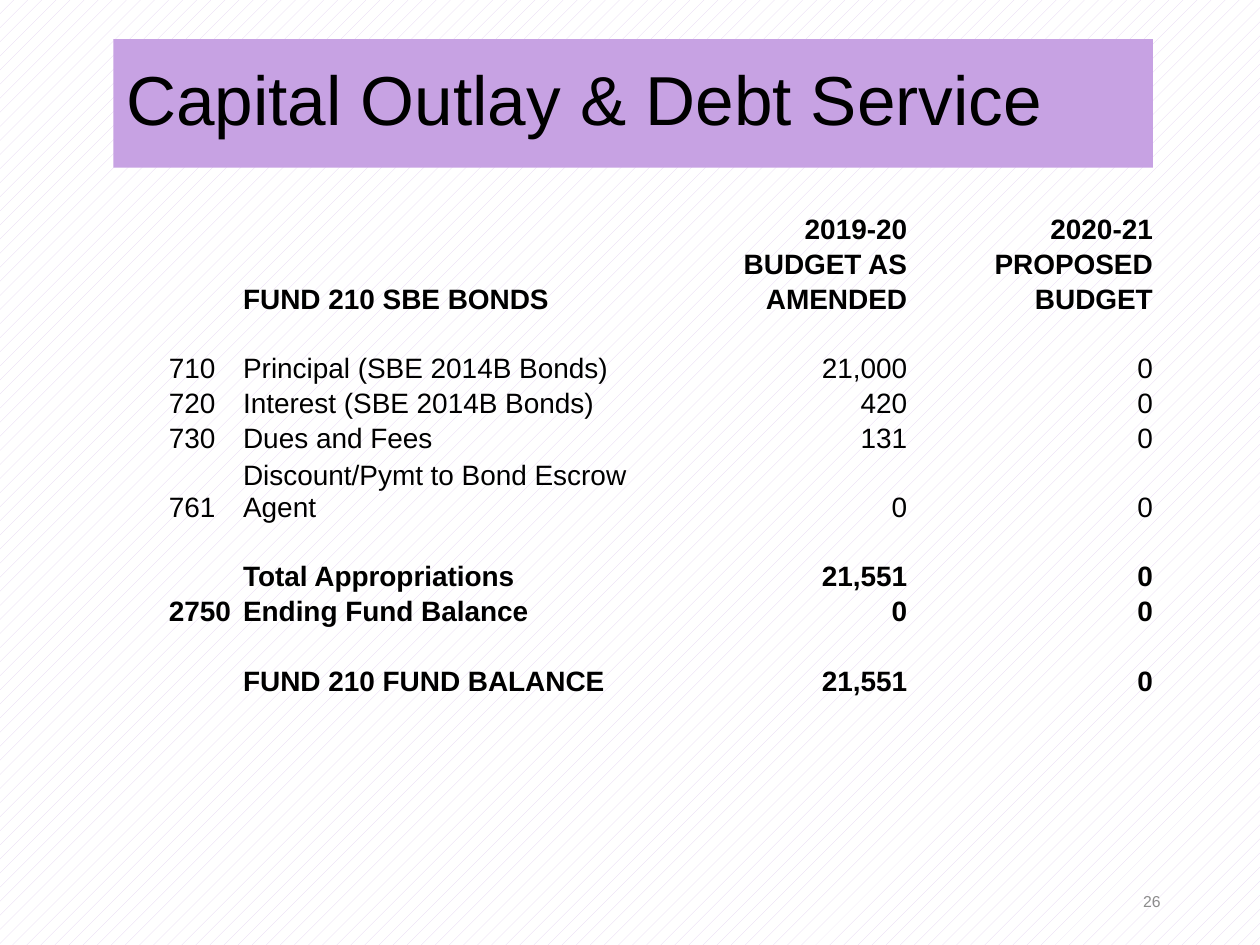
import lxml.etree
import pptx
import pptx.dml.color
import pptx.enum.dml
import pptx.enum.text
import pptx.oxml.ns
import pptx.util

BLACK = pptx.dml.color.RGBColor(0x00, 0x00, 0x00)
WHITE = pptx.dml.color.RGBColor(0xFF, 0xFF, 0xFF)
GREY = pptx.dml.color.RGBColor(0x8C, 0x8C, 0x8C)
LILAC = pptx.dml.color.RGBColor(0xC7, 0xA2, 0xE3)
PALE_LILAC = pptx.dml.color.RGBColor(0xE3, 0xD1, 0xF1)

LEFT = pptx.enum.text.PP_ALIGN.LEFT
RIGHT = pptx.enum.text.PP_ALIGN.RIGHT
MIDDLE = pptx.enum.text.MSO_ANCHOR.MIDDLE
BOTTOM = pptx.enum.text.MSO_ANCHOR.BOTTOM

FONT = "Arial"
GRID_COLUMNS, GRID_ROWS = 100, 75

BLANK = ("", "", "", "")
HEADINGS = [
    ("", "", "2019-20", "2020-21"),
    ("", "", "BUDGET AS", "PROPOSED"),
    ("", "FUND 210 SBE BONDS", "AMENDED", "BUDGET"),
]
APPROPRIATIONS = [
    ("710", "Principal (SBE 2014B Bonds)", "21,000", "0"),
    ("720", "Interest (SBE 2014B Bonds)", "420", "0"),
    ("730", "Dues and Fees", "131", "0"),
    ("761", "Discount/Pymt to Bond Escrow Agent", "0", "0"),
]
TOTALS = [
    ("", "Total Appropriations", "21,551", "0"),
    ("2750", "Ending Fund Balance", "0", "0"),
    BLANK,
    ("", "FUND 210 FUND BALANCE", "21,551", "0"),
]
FUND_ROWS = HEADINGS + [BLANK] + APPROPRIATIONS + [BLANK] + TOTALS + [BLANK] * 4
COLUMN_WIDTHS = [5.9, 36.8, 16.1, 19.5]
ROW_HEIGHT, WRAPPED_ROW_HEIGHT = 2.65, 5


def write(frame, text, size, color=BLACK, bold=False, align=LEFT, spacing=None):
    line = frame.paragraphs[0]
    line.alignment = align
    line.line_spacing = spacing
    if not text:
        end = lxml.etree.SubElement(line._p, pptx.oxml.ns.qn("a:endParaRPr"))
        end.set("sz", str(size * 100))
        return
    run = line.add_run()
    run.text = text
    run.font.name = FONT
    run.font.size = pptx.util.Pt(size)
    run.font.bold = bold
    run.font.color.rgb = color


class BudgetSlide:
    def __init__(self, deck):
        self.column = deck.slide_width / GRID_COLUMNS
        self.row = deck.slide_height / GRID_ROWS
        self.slide = deck.slides.add_slide(deck.slide_layouts[5])

    def box(self, left, top, width, height):
        return (int(left * self.column), int(top * self.row),
                int(width * self.column), int(height * self.row))

    def background(self, foreground, background):
        fill = self.slide.background.fill
        fill.patterned()
        fill.pattern = pptx.enum.dml.MSO_PATTERN.PERCENT_10
        fill.fore_color.rgb = foreground
        fill.back_color.rgb = background

    def title(self, text, *place):
        title = self.slide.shapes.title
        title.left, title.top, title.width, title.height = self.box(*place)
        title.fill.solid()
        title.fill.fore_color.rgb = LILAC
        title.text_frame.auto_size = pptx.enum.text.MSO_AUTO_SIZE.NONE
        title.text_frame.vertical_anchor = MIDDLE
        write(title.text_frame, text, 39.6, spacing=0.9)

    def page_number(self, text, *place):
        frame = self.slide.shapes.add_textbox(*self.box(*place)).text_frame
        frame.word_wrap = True
        frame.vertical_anchor = MIDDLE
        write(frame, text, 9, color=GREY, align=RIGHT)

    def table(self, rows, left, top):
        heights = [WRAPPED_ROW_HEIGHT if row[0] == "761" else ROW_HEIGHT for row in rows]
        place = self.box(left, top, sum(COLUMN_WIDTHS), sum(heights))
        table = self.slide.shapes.add_table(len(rows), len(COLUMN_WIDTHS), *place).table
        table.first_row = table.horz_banding = False
        for column, width in zip(table.columns, COLUMN_WIDTHS):
            column.width = int(width * self.column)
        for table_row, height, texts in zip(table.rows, heights, rows):
            table_row.height = int(height * self.row)
            for index, (cell, text) in enumerate(zip(table_row.cells, texts)):
                cell.fill.background()
                cell.vertical_anchor = BOTTOM
                cell.margin_left = cell.margin_right = cell.margin_top = pptx.util.Inches(0.01)
                cell.margin_bottom = 0
                write(cell.text_frame, text, 16, bold=texts not in APPROPRIATIONS,
                      align=RIGHT if index > 1 else LEFT)
        self.strip_style(table)

    def strip_style(self, table):
        style = table._tbl.tblPr.find(pptx.oxml.ns.qn("a:tableStyleId"))
        style.text = "{2D5ABB26-0587-4C30-8999-92F81FD0307C}"


def main():
    deck = pptx.Presentation()
    deck.slide_width = pptx.util.Inches(10)
    deck.slide_height = pptx.util.Inches(7.5)
    budget = BudgetSlide(deck)
    budget.background(PALE_LILAC, WHITE)
    budget.title("Capital Outlay & Debt Service", 9, 3.1, 82.5, 10.2)
    budget.page_number("26", 70.6, 69.5, 22.5, 4)
    budget.table(FUND_ROWS, 13.3, 16.7)
    deck.save("out.pptx")


if __name__ == "__main__":
    main()
